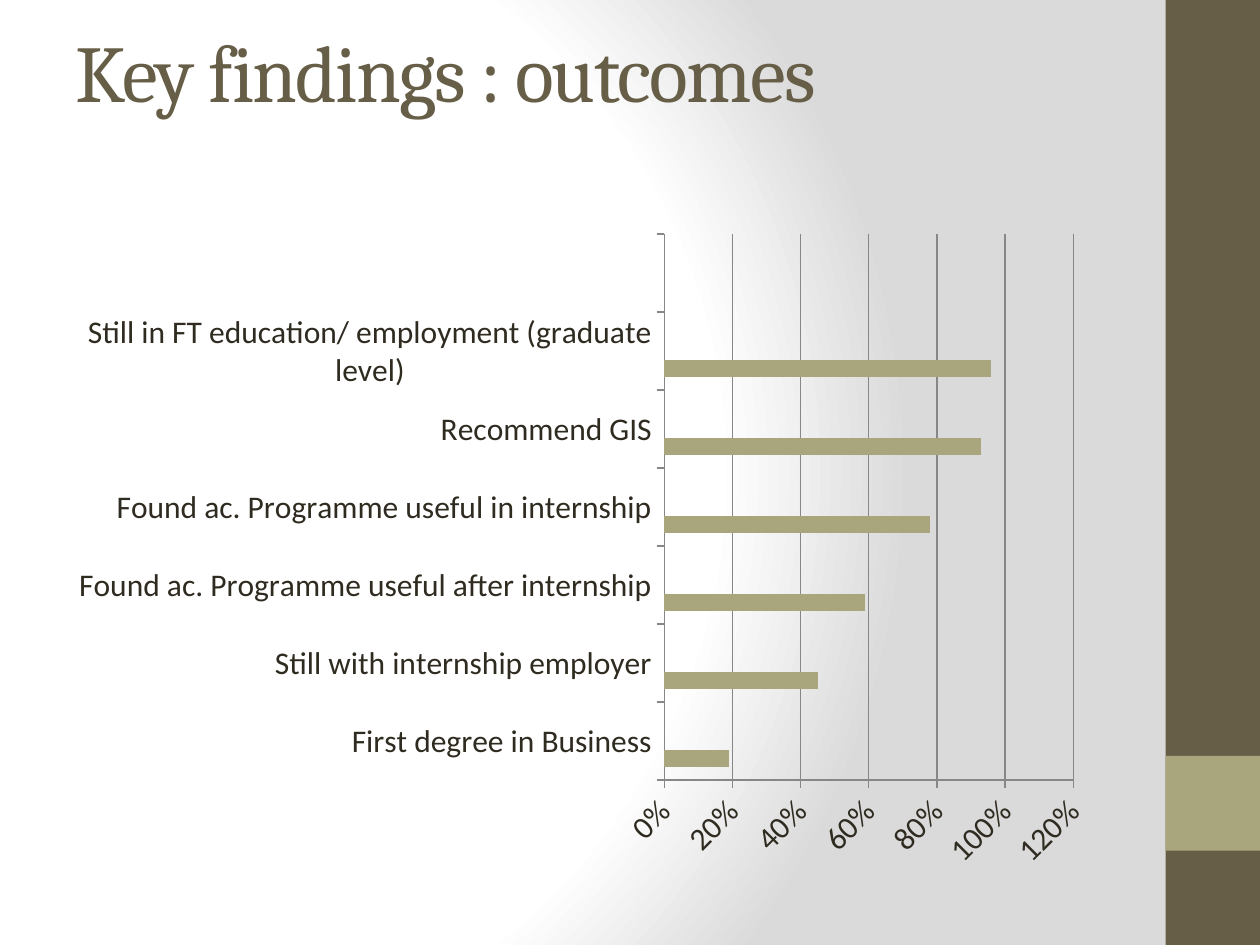
from dataclasses import dataclass

import lxml.etree
import pptx
import pptx.chart.data
import pptx.dml.color
import pptx.enum.chart
import pptx.enum.shapes
import pptx.enum.text
import pptx.oxml
import pptx.oxml.ns
import pptx.util
from pptx.util import Cm, Pt

BROWN, OLIVE, TEXT, GRID = "675E47", "A9A57C", "2F2B20", "878787"


@dataclass
class Band:
    top: float
    height: float
    color: str


@dataclass
class Series:
    name: str
    values: list
    color: str


BANDS = [Band(0, 19.05, BROWN), Band(15.24, 1.91, OLIVE)]

CATEGORIES = [
    "First degree in Business",
    "Still with internship employer",
    "Found ac. Programme useful after internship",
    "Found ac. Programme useful in internship",
    "Recommend GIS",
    "Still in FT education/ employment (graduate level)",
    "",
]
SERIES = [
    Series("Series 1", [0.19, 0.45, 0.59, 0.78, 0.93, 0.96, None], OLIVE),
    Series("Series 2", [None] * 7, "9CBEBD"),
    Series("Series 3", [None] * 7, "D2CB6C"),
]

BACKGROUND = (
    f'<a:gradFill {pptx.oxml.ns.nsdecls("a")} rotWithShape="1"><a:gsLst>'
    '<a:gs pos="0"><a:srgbClr val="FFFFFF"/></a:gs>'
    '<a:gs pos="75000"><a:srgbClr val="FFFFFF"/></a:gs>'
    '<a:gs pos="100000"><a:srgbClr val="DADADA"/></a:gs></a:gsLst>'
    '<a:path path="circle">'
    '<a:fillToRect l="20000" t="50000" r="100000" b="50000"/></a:path></a:gradFill>'
)


def rgb(color: str) -> pptx.dml.color.RGBColor:
    return pptx.dml.color.RGBColor.from_string(color)


def set_background(slide) -> None:
    slide.background.fill.solid()
    solid = next(slide.element.iter(pptx.oxml.ns.qn("a:solidFill")))
    solid.getparent().replace(solid, pptx.oxml.parse_xml(BACKGROUND))


def draw_band(slide, band: Band) -> None:
    shape = slide.shapes.add_shape(
        pptx.enum.shapes.MSO_SHAPE.RECTANGLE,
        Cm(23.5), Cm(band.top), Cm(1.9), Cm(band.height),
    )
    shape.shadow.inherit = False
    shape.fill.solid()
    shape.fill.fore_color.rgb = rgb(band.color)
    shape.line.fill.background()


def set_title(slide, text: str) -> None:
    title = slide.shapes.title
    title.left, title.top, title.width, title.height = Cm(1.27), Cm(0.45), Cm(21.16), Cm(3.49)
    frame = title.text_frame
    frame.text = text
    frame.word_wrap = True
    frame.margin_top = 0
    frame.vertical_anchor = pptx.enum.text.MSO_ANCHOR.TOP
    paragraph = frame.paragraphs[0]
    paragraph.alignment = pptx.enum.text.PP_ALIGN.LEFT
    paragraph.font.name = "Cambria"
    paragraph.font.size = Pt(46)
    paragraph.font.color.rgb = rgb(BROWN)
    paragraph.runs[0].font._element.set("spc", "-100")


def style_line(line) -> None:
    line.color.rgb = rgb(GRID)
    line.width = Pt(0.75)


def draw_chart(slide) -> None:
    data = pptx.chart.data.CategoryChartData(number_format="0%")
    data.categories = CATEGORIES
    for series in SERIES:
        data.add_series(series.name, series.values)
    chart = slide.shapes.add_chart(
        pptx.enum.chart.XL_CHART_TYPE.BAR_CLUSTERED,
        Cm(1.27), Cm(4.45), Cm(21.16), Cm(13.34), data,
    ).chart
    chart.has_legend = False
    chart.has_title = False
    chart.font.name = "Calibri"
    chart.font.size = Pt(18)
    chart.font.color.rgb = rgb(TEXT)

    # Bars
    plot = chart.plots[0]
    plot.gap_width = 150
    plot.vary_by_categories = False
    for bars, series in zip(plot.series, SERIES):
        bars.format.fill.solid()
        bars.format.fill.fore_color.rgb = rgb(series.color)

    # Axes
    for axis in (chart.category_axis, chart.value_axis):
        axis.major_tick_mark = pptx.enum.chart.XL_TICK_MARK.OUTSIDE
        style_line(axis.format.line)
    value_axis = chart.value_axis
    value_axis.minimum_scale, value_axis.maximum_scale, value_axis.major_unit = 0, 1.2, 0.2
    value_axis.has_major_gridlines = True
    style_line(value_axis.major_gridlines.format.line)
    labels = value_axis.tick_labels
    labels.number_format = "0%"
    labels.number_format_is_linked = False
    labels.font.size = Pt(18)
    body = next(value_axis._element.iter(pptx.oxml.ns.qn("a:bodyPr")))
    body.set("rot", "-2700000")


def main() -> None:
    presentation = pptx.Presentation()
    presentation.slide_width, presentation.slide_height = Cm(25.4), Cm(19.05)
    slide = presentation.slides.add_slide(presentation.slide_layouts[5])
    set_background(slide)
    for band in BANDS:
        draw_band(slide, band)
    set_title(slide, "Key findings : outcomes")
    draw_chart(slide)
    presentation.save("out.pptx")


if __name__ == "__main__":
    main()
